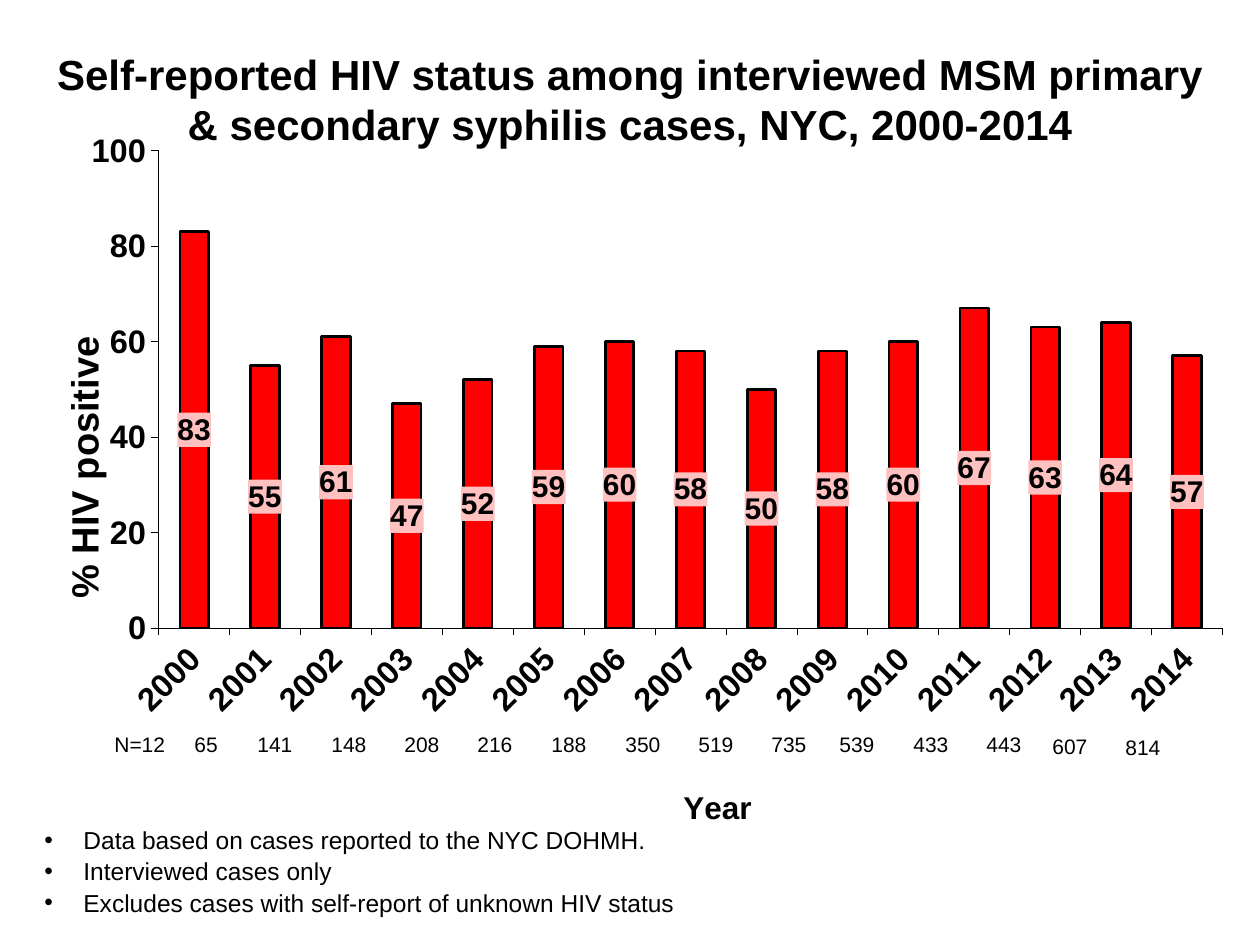
from dataclasses import dataclass

from lxml.etree import SubElement
from pptx import Presentation
from pptx.chart.data import CategoryChartData
from pptx.dml.color import RGBColor
from pptx.enum.chart import XL_CHART_TYPE, XL_LABEL_POSITION, XL_TICK_MARK
from pptx.enum.text import MSO_ANCHOR, PP_ALIGN
from pptx.oxml import parse_xml
from pptx.oxml.ns import nsdecls, qn
from pptx.util import Emu, Pt


@dataclass(frozen=True)
class Theme:
    font: str = "Arial"
    ink: RGBColor = RGBColor(0, 0, 0)
    bar: RGBColor = RGBColor(255, 0, 0)
    label_fill: str = "FFC0C0"
    title: float = 24
    note: float = 14
    count: float = 12
    tick: float = 18.6
    value_label: float = 17.1
    year_title: float = 18
    percent_title: float = 21.7


@dataclass(frozen=True)
class Area:
    left: int
    top: int
    width: int
    height: int

    def emu(self) -> list[Emu]:
        return [px(n) for n in (self.left, self.top, self.width, self.height)]


@dataclass(frozen=True)
class SampleSize:
    text: str
    left: int
    top: int = 725


THEME = Theme()
PX_PER_INCH = 126

YEARS = [str(year) for year in range(2000, 2015)]
PERCENTAGES = [83, 55, 61, 47, 52, 59, 60, 58, 50, 58, 60, 67, 63, 64, 57]
NOTES = [
    "Data based on cases reported to the NYC DOHMH.",
    "Interviewed cases only",
    "Excludes cases with self-report of unknown HIV status",
]

# Sample sizes: three evenly spaced runs, the last two boxes sit a little lower
EARLY = ["141", "148", "208", "216", "188", "350", "519", "735"]
LATE = ["539", "433", "443"]
SAMPLE_SIZES = [
    SampleSize("N=12", 102),
    SampleSize("65", 182),
    *(SampleSize(text, 245 + round(73.5 * i)) for i, text in enumerate(EARLY)),
    *(SampleSize(text, 827 + round(73.5 * i)) for i, text in enumerate(LATE)),
    SampleSize("607", 1040, 727),
    SampleSize("814", 1113, 728),
]


def px(count: float) -> Emu:
    return Emu(round(count * 914400 / PX_PER_INCH))


def style_font(font, size: float, bold: bool = False) -> None:
    font.name, font.size, font.bold = THEME.font, Pt(size), bold
    font.color.rgb = THEME.ink


def add_text(page, area: Area, lines: list[str], size: float, bold: bool = False,
             align: PP_ALIGN = PP_ALIGN.LEFT, bullets: bool = False) -> None:
    frame = page.shapes.add_textbox(*area.emu()).text_frame
    frame.text = "\n".join(lines)
    frame.word_wrap = True
    frame.vertical_anchor = MSO_ANCHOR.TOP
    for para in frame.paragraphs:
        para.alignment = align
        for span in para.runs:
            style_font(span.font, size, bold)
        if bullets:
            para.space_before = Pt(1)
            properties = para._p.get_or_add_pPr()
            properties.set("marL", str(px(39)))
            properties.set("indent", str(px(-39)))
            SubElement(properties, qn("a:buFont")).set("typeface", THEME.font)
            SubElement(properties, qn("a:buChar")).set("char", "•")


def make_layout(inner: bool = False, **shares: float):
    """Manual chart layout, in shares of the chart's size."""
    target = '<c:layoutTarget val="inner"/>' if inner else ""
    modes = '<c:xMode val="edge"/><c:yMode val="edge"/>'
    places = "".join(f'<c:{name} val="{share}"/>' for name, share in shares.items())
    return parse_xml(f'<c:layout {nsdecls("c")}><c:manualLayout>{target}{modes}'
                     f'{places}</c:manualLayout></c:layout>')


def style_axis(axis, title: str, title_size: float, x: float, y: float) -> None:
    axis.has_major_gridlines = False
    axis.major_tick_mark = XL_TICK_MARK.OUTSIDE
    axis.minor_tick_mark = XL_TICK_MARK.NONE
    axis.format.line.color.rgb = THEME.ink
    axis.format.line.width = Pt(0.39)
    style_font(axis.tick_labels.font, THEME.tick, True)
    frame = axis.axis_title.text_frame
    frame.text = title
    style_font(frame.paragraphs[0].runs[0].font, title_size, True)
    element = axis.axis_title._element
    for old in element.findall(qn("c:layout")):
        element.remove(old)
    element.find(qn("c:tx")).addnext(make_layout(x=x, y=y))


def add_status_chart(page, area: Area) -> None:
    data = CategoryChartData(number_format="0")
    data.categories = YEARS
    data.add_series("Series 1", PERCENTAGES)
    chart = page.shapes.add_chart(XL_CHART_TYPE.COLUMN_STACKED, *area.emu(), data).chart
    chart.has_legend = chart.has_title = False
    style_font(chart.font, THEME.tick, True)

    # Axes
    years, percent = chart.category_axis, chart.value_axis
    style_axis(years, "Year", THEME.year_title, 0.52, 0.83)
    style_axis(percent, "% HIV positive", THEME.percent_title, 0.035, 0.315)
    percent.axis_title._element.find(".//" + qn("a:bodyPr")).set("rot", "-5400000")
    years._element.find(qn("c:txPr")).find(qn("a:bodyPr")).set("rot", "-2700000")
    percent.minimum_scale, percent.maximum_scale, percent.major_unit = 0, 100, 20

    # Plot area
    plot_area = chart._chartSpace.chart.plotArea
    for old in plot_area.findall(qn("c:layout")):
        plot_area.remove(old)
    plot_area.insert(0, make_layout(inner=True, x=0.117, y=0.111, w=0.826, h=0.544))

    # Bars
    plot = chart.plots[0]
    plot.gap_width, plot.overlap, plot.vary_by_categories = 150, 100, False
    series = plot.series[0]
    series.format.fill.solid()
    series.format.fill.fore_color.rgb = THEME.bar
    series.format.line.color.rgb = THEME.ink
    series.format.line.width = Pt(1.55)

    # Value labels on a tinted ground
    labels = series.data_labels
    labels.show_value = True
    labels.number_format, labels.number_format_is_linked = "0", False
    labels.position = XL_LABEL_POSITION.CENTER
    style_font(labels.font, THEME.value_label, True)
    labels._element.find(qn("c:txPr")).addprevious(parse_xml(
        f'<c:spPr {nsdecls("c", "a")}><a:solidFill>'
        f'<a:srgbClr val="{THEME.label_fill}"/></a:solidFill></c:spPr>'))


def main() -> None:
    deck = Presentation()
    deck.slide_width, deck.slide_height = px(1260), px(945)
    page = deck.slides.add_slide(deck.slide_layouts[6])

    add_status_chart(page, Area(8, 53, 1288, 878))
    add_text(page, Area(32, 819, 1092, 105), NOTES, THEME.note, bullets=True)
    for sample in SAMPLE_SIZES:
        add_text(page, Area(sample.left, sample.top, 105, 38), [sample.text], THEME.count)
    add_text(page, Area(42, 42, 1176, 115),
             ["Self-reported HIV status among interviewed MSM primary "
              "& secondary syphilis cases, NYC, 2000-2014"],
             THEME.title, bold=True, align=PP_ALIGN.CENTER)

    deck.save("out.pptx")


if __name__ == "__main__":
    main()
